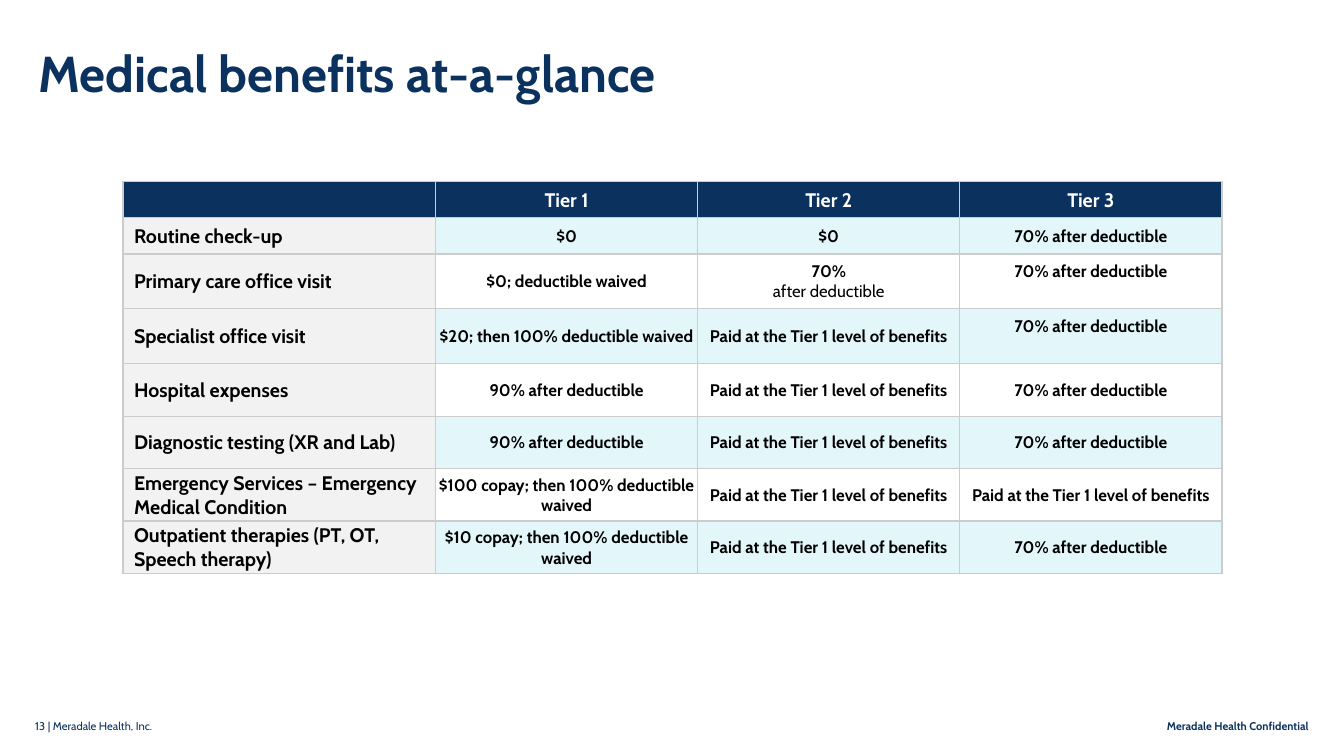
from dataclasses import dataclass

import pptx
import pptx.dml.color
import pptx.enum.text
import pptx.oxml
import pptx.oxml.ns
import pptx.util
from pptx.util import Inches

ALIGN = pptx.enum.text.PP_ALIGN
MIDDLE = pptx.enum.text.MSO_ANCHOR.MIDDLE


@dataclass(frozen=True)
class Theme:
    font: str = "Cabin"
    navy: str = "0B315E"
    white: str = "FFFFFF"
    black: str = "000000"
    label_grey: str = "F2F2F2"
    aqua: str = "77D8E8"
    border: str = "CCCCCC"
    band_opacity: int = 20
    title_size: int = 36
    label_size: int = 14
    value_size: int = 12
    footer_size: int = 8


THEME = Theme()

TIERS = ["", "Tier 1", "Tier 2", "Tier 3"]
AFTER_DEDUCTIBLE = "70% after deductible"
AS_TIER_1 = "Paid at the Tier 1 level of benefits"
BENEFITS = [
    ["Routine check-up", "$0", "$0", AFTER_DEDUCTIBLE],
    ["Primary care office visit", "$0; deductible waived", "70%\nafter deductible", AFTER_DEDUCTIBLE],
    ["Specialist office visit", "$20; then 100% deductible waived", AS_TIER_1, AFTER_DEDUCTIBLE],
    ["Hospital expenses", "90% after deductible", AS_TIER_1, AFTER_DEDUCTIBLE],
    ["Diagnostic testing (XR and Lab)", "90% after deductible", AS_TIER_1, AFTER_DEDUCTIBLE],
    ["Emergency Services – Emergency Medical Condition",
     "$100 copay; then 100% deductible waived", AS_TIER_1, AS_TIER_1],
    ["Outpatient therapies (PT, OT, Speech therapy)",
     "$10 copay; then 100% deductible waived", AS_TIER_1, AFTER_DEDUCTIBLE],
]
COLUMN_WIDTHS = [3.1, 2.6, 2.6, 2.6]
ROW_HEIGHTS = [0.36, 0.36, 0.54, 0.55, 0.52, 0.52, 0.52, 0.52]
RAISED_CELLS = {(2, 3), (3, 3)}


def rgb(colour):
    return pptx.dml.color.RGBColor.from_string(colour)


def style_paragraph(para, size, colour, bold=True, align=ALIGN.LEFT):
    para.alignment = align
    para.font.name = THEME.font
    para.font.size = pptx.util.Pt(size)
    para.font.bold = bold
    para.font.color.rgb = rgb(colour)


def add_title(page, text):
    title = page.shapes.title
    title.left, title.top = Inches(0.38), Inches(0.53)
    title.width, title.height = Inches(12.84), Inches(0.46)
    frame = title.text_frame
    frame.text = text
    frame.margin_left = frame.margin_right = frame.margin_top = frame.margin_bottom = 0
    frame.vertical_anchor = MIDDLE
    frame.auto_size = pptx.enum.text.MSO_AUTO_SIZE.NONE
    para = frame.paragraphs[0]
    para.line_spacing = 0.9
    style_paragraph(para, THEME.title_size, THEME.navy)


def add_footer(page, text, left, width, bold, align):
    box = page.shapes.add_textbox(Inches(left), Inches(7.09), Inches(width), Inches(0.24))
    frame = box.text_frame
    frame.word_wrap = True
    frame.text = text
    style_paragraph(frame.paragraphs[0], THEME.footer_size, THEME.navy, bold, align)


def fill_cell(cell, colour, opacity=100):
    cell.fill.solid()
    cell.fill.fore_color.rgb = rgb(colour)
    if opacity < 100:
        properties = cell._tc.get_or_add_tcPr()
        tint = properties.find(".//" + pptx.oxml.ns.qn("a:srgbClr"))
        tint.append(pptx.oxml.parse_xml(
            f'<a:alpha {pptx.oxml.ns.nsdecls("a")} val="{opacity * 1000}"/>'))


def border_cell(cell):
    """Draw a thin line on all four sides; borders must precede the fill in the XML."""
    properties = cell._tc.get_or_add_tcPr()
    for position, side in enumerate(["lnL", "lnR", "lnT", "lnB"]):
        properties.insert(position, pptx.oxml.parse_xml(
            f'<a:{side} {pptx.oxml.ns.nsdecls("a")} w="12700"><a:solidFill>'
            f'<a:srgbClr val="{THEME.border}"/></a:solidFill></a:{side}>'))


def write_cell(cell, text, size, colour, align, indent=0.0):
    cell.vertical_anchor = MIDDLE
    cell.margin_left = Inches(0.01 + indent)
    cell.margin_right = cell.margin_top = Inches(0.01)
    cell.margin_bottom = 0
    cell.text = text
    for position, para in enumerate(cell.text_frame.paragraphs):
        style_paragraph(para, size, colour, position == 0, align)


def add_benefits_table(page):
    rows = [TIERS] + BENEFITS
    frame = page.shapes.add_table(
        len(rows), len(TIERS), Inches(1.22), Inches(1.8),
        Inches(sum(COLUMN_WIDTHS)), Inches(sum(ROW_HEIGHTS)))
    table = frame.table
    for column, width in zip(table.columns, COLUMN_WIDTHS):
        column.width = Inches(width)
    for row, height in zip(table.rows, ROW_HEIGHTS):
        row.height = Inches(height)
    for row_number, texts in enumerate(rows):
        for column_number, text in enumerate(texts):
            cell = table.cell(row_number, column_number)
            if row_number == 0:
                write_cell(cell, text, THEME.label_size, THEME.white, ALIGN.CENTER)
                fill_cell(cell, THEME.navy)
            elif column_number == 0:
                write_cell(cell, text, THEME.label_size, THEME.black, ALIGN.LEFT, 0.1)
                fill_cell(cell, THEME.label_grey)
            else:
                write_cell(cell, text, THEME.value_size, THEME.black, ALIGN.CENTER)
                band = THEME.aqua if row_number % 2 else THEME.white
                fill_cell(cell, band, THEME.band_opacity)
            if (row_number, column_number) in RAISED_CELLS:
                cell.margin_bottom = Inches(0.2)
            border_cell(cell)


def main():
    deck = pptx.Presentation()
    deck.slide_width, deck.slide_height = Inches(13.33), Inches(7.5)
    page = deck.slides.add_slide(deck.slide_layouts.get_by_name("Title Only"))
    add_footer(page, "13 | Meradale Health, Inc.", 0.25, 10.35, False, ALIGN.LEFT)
    add_footer(page, "Meradale Health Confidential", 11.02, 2.06, True, ALIGN.RIGHT)
    add_title(page, "Medical benefits at-a-glance")
    add_benefits_table(page)
    deck.save("out.pptx")


if __name__ == "__main__":
    main()
